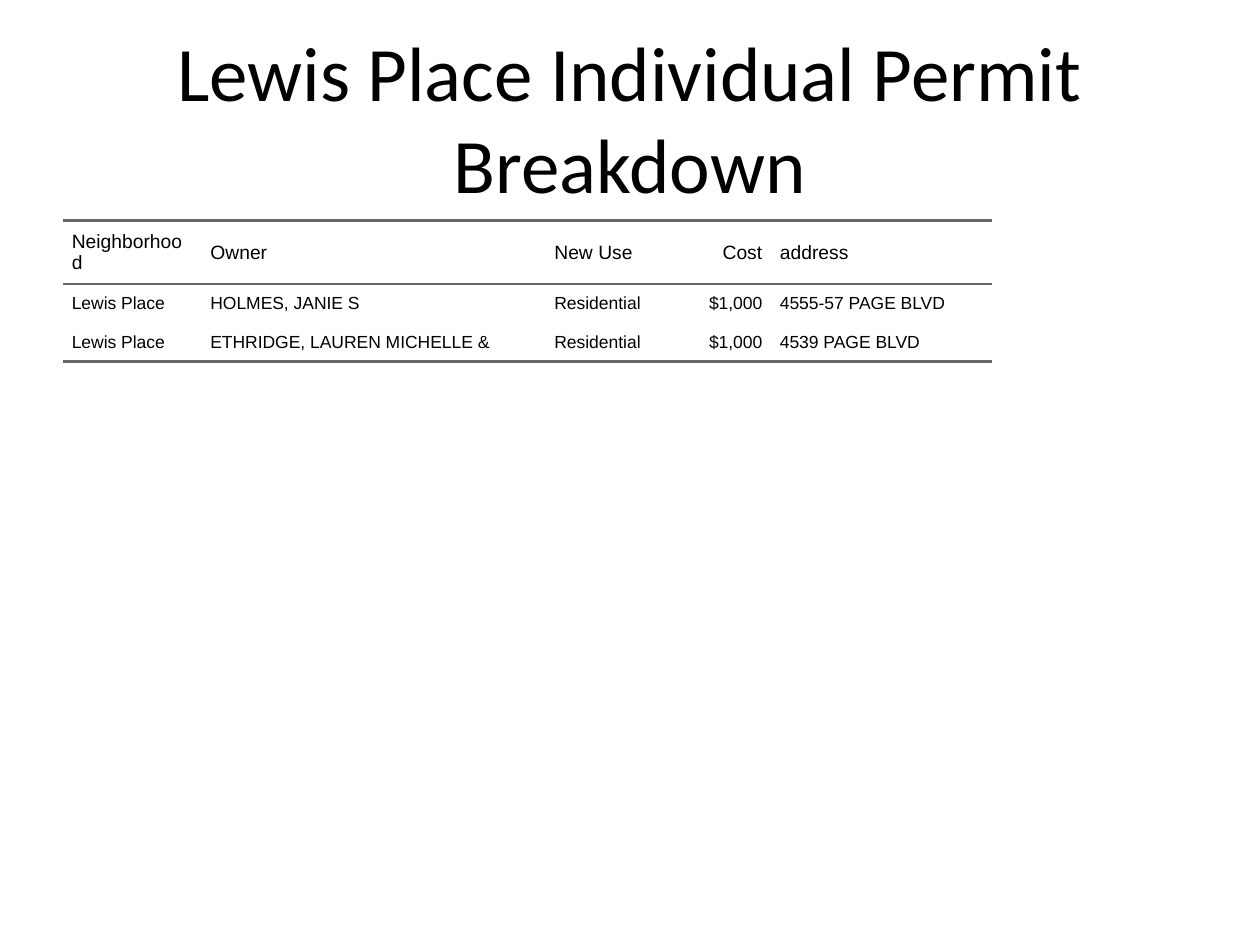
from dataclasses import dataclass
from lxml.etree import SubElement
from pptx import Presentation
from pptx.dml.color import RGBColor
from pptx.enum.text import MSO_ANCHOR, PP_ALIGN
from pptx.oxml.ns import qn
from pptx.util import Inches, Pt


@dataclass(frozen=True)
class Theme:
    ink: str = "000000"
    rule: str = "666666"
    paper: str = "FFFFFF"
    head: str = "Calibri"
    body: str = "Arial"
    title: float = 44
    label: float = 11
    cell: float = 10
    line: float = 1.5


theme = Theme()
WIDE, HIGH = Inches(10), Inches(7.5)

# Boxes are left, top, width, height as shares of the slide
TITLE = (0.05, 0.04, 0.9, 1 / 6)
TABLE = (0.05, 7 / 30, 0.737, 0.1)
# Column widths as parts of the table's width
PARTS = (110, 273, 104, 75, 175)
COST = 3
ROWS = (
    ("Neighborhood", "Owner", "New Use", "Cost", "address"),
    ("Lewis Place", "HOLMES, JANIE S", "Residential", "$1,000", "4555-57 PAGE BLVD"),
    ("Lewis Place", "ETHRIDGE, LAUREN MICHELLE &", "Residential", "$1,000", "4539 PAGE BLVD"),
)


def place(box):
    """Turn shares of the slide into lengths."""
    return [int(part * full) for part, full in zip(box, (WIDE, HIGH) * 2)]


def write(frame, text, *, font, size, align=PP_ALIGN.LEFT):
    frame.word_wrap = True
    para = frame.paragraphs[0]
    para.alignment = align
    run = para.add_run()
    run.text = text
    run.font.name = font
    run.font.size = Pt(size)
    run.font.bold = False
    run.font.color.rgb = RGBColor.from_string(theme.ink)


def border(cell, sides):
    """Rule the named sides and clear the others."""
    props = cell._tc.get_or_add_tcPr()
    for spot, side in enumerate("LRTB"):
        line = props.makeelement(qn(f"a:ln{side}"), {"w": str(Pt(theme.line))})
        props.insert(spot, line)
        if side in sides:
            fill = SubElement(line, qn("a:solidFill"))
            SubElement(fill, qn("a:srgbClr"), val=theme.rule)
        else:
            SubElement(line, qn("a:noFill"))


def add_title(slide, box):
    frame = slide.shapes.add_textbox(*place(box)).text_frame
    frame.vertical_anchor = MSO_ANCHOR.MIDDLE
    write(frame, "Lewis Place Individual Permit Breakdown",
          font=theme.head, size=theme.title, align=PP_ALIGN.CENTER)


def add_grid(slide, box):
    left, top, width, height = place(box)
    table = slide.shapes.add_table(
        len(ROWS), len(PARTS), left, top, width, height).table
    table.first_row = table.horz_banding = False
    for col, part in zip(table.columns, PARTS):
        col.width = int(width * part / sum(PARTS))

    # Rules run above and below the header, and below the last row
    sides = ["TB"] + ["T"] + [""] * (len(ROWS) - 2)
    sides[-1] += "B"
    for r, row in enumerate(ROWS):
        for c, text in enumerate(row):
            cell = table.cell(r, c)
            cell.fill.background()
            cell.vertical_anchor = MSO_ANCHOR.MIDDLE
            cell.margin_left = cell.margin_right = Inches(0.07)
            cell.margin_top = cell.margin_bottom = Inches(0.07)
            write(cell.text_frame, text, font=theme.body,
                  size=theme.cell if r else theme.label,
                  align=PP_ALIGN.RIGHT if c == COST else PP_ALIGN.LEFT)
            border(cell, sides[r])


def main():
    deck = Presentation()
    deck.slide_width, deck.slide_height = WIDE, HIGH
    slide = deck.slides.add_slide(deck.slide_layouts[6])
    back = slide.background.fill
    back.solid()
    back.fore_color.rgb = RGBColor.from_string(theme.paper)
    add_title(slide, TITLE)
    add_grid(slide, TABLE)
    deck.save("out.pptx")


if __name__ == "__main__":
    main()
